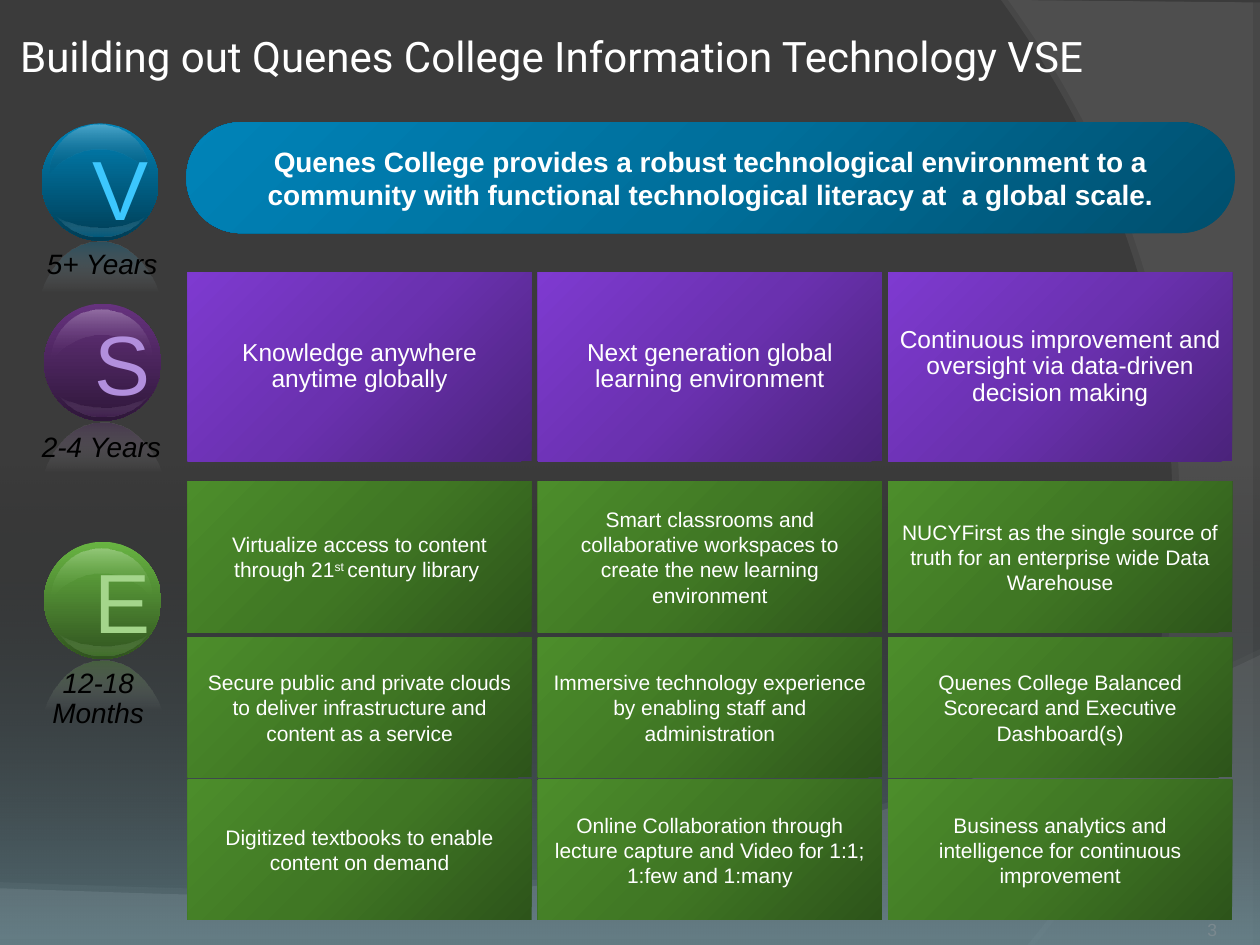
"""Build the VSE roadmap slide on a grid of 100 columns by 75 rows."""
from dataclasses import dataclass

from pptx import Presentation
from pptx.dml.color import RGBColor
from pptx.enum.shapes import MSO_SHAPE
from pptx.enum.text import MSO_ANCHOR, MSO_AUTO_SIZE, PP_ALIGN
from pptx.oxml import parse_xml
from pptx.oxml.ns import nsdecls, qn
from pptx.shapes.autoshape import Shape
from pptx.slide import Slide
from pptx.util import Inches, Pt

CARD, OVAL, MOON, RECT = (MSO_SHAPE.ROUNDED_RECTANGLE, MSO_SHAPE.OVAL,
                          MSO_SHAPE.MOON, MSO_SHAPE.RECTANGLE)
LEFT, CENTER = PP_ALIGN.LEFT, PP_ALIGN.CENTER
MIDDLE, TOP = MSO_ANCHOR.MIDDLE, MSO_ANCHOR.TOP
GROW, FIXED = MSO_AUTO_SIZE.SHAPE_TO_FIT_TEXT, MSO_AUTO_SIZE.NONE
WIDTH, HEIGHT = Inches(10), Inches(7.5)
COLS, ROWS = 100, 75
WHITE, BLACK = "FFFFFF", "000000"
FIRST_COL, COL_STEP, CARD_W = 14.9, 27.8, 27.3
BLUE = ("004E6D", "006F9B", "0083B8")
PURPLE = ("4B237B", "6A31AF", "7E3AD0")
GREEN = ("2D541A", "407724", "4C8D2B")
WAVE = [[(0, 70.5)], [(0, 75)], [(100, 75)], [(100, 52)],
        [(55.9, 72.9), (39.1, 71.9), (0, 70.5)]]
SWEEP = [[(100, 0.2)], [(100, 75)], [(82.1, 75)],
         [(93.5, 61.9), (101.8, 30), (80, 0)], [(100, 0.2)]]
REFLECTION = [[(4.6, 9.4)], [(2.5, 9.4), (0.8, 11), (0, 13.3)], [(9.3, 13.3)],
              [(8.4, 11), (6.7, 9.4), (4.6, 9.4)]]
RIM = [[(8.2, 7.4)], [(7.4, 8), (5.8, 8.3), (4.7, 8.3)], [(3.6, 8.3), (2, 8), (1.2, 7.4)],
       [(1.4, 7.6), (1.6, 7.8), (1.8, 8)], [(2.5, 8.6), (3.6, 9), (4.7, 9)],
       [(5.8, 9), (6.9, 8.6), (7.6, 8)], [(7.8, 7.8), (8, 7.6), (8.2, 7.4)]]

Segment = list[tuple[float, float]]


@dataclass(frozen=True)
class Ball:
    """A glossy lettered ball with its time span below."""
    letter: str
    x: float
    y: float
    light: str
    dark: str
    letter_color: str
    letter_y: float
    gloss_y: float
    gloss_end: str
    rim_opacity: float
    span: str
    span_box: tuple


@dataclass(frozen=True)
class CardRow:
    """A row of three equal cards."""
    y: float
    h: float
    colors: tuple
    size: float
    spacing: float | None
    inset: float
    texts: tuple


BALLS = (
    Ball("V", 3.3, 9.8, "0183B7", "003D55", "3CC7FE", 1.4, -1.9, BLACK, 40,
         "5+ Years", (2.5, 19.4, 11.2, 3.4)),
    Ball("E", 3.5, 43, "68B442", "30531F", "A4D58B", 1, -1.5, "68B442", 30,
         "12-18\nMonths", (3.1, 52.6, 9.4, 5.9)),
    Ball("S", 3.5, 24.1, "66327E", "2F173A", "B28FDD", 1, -1.5, "66327E", 30,
         "2-4 Years", (2.1, 33.9, 11.9, 3.4)),
)
CARD_ROWS = (
    CardRow(21.6, 15, PURPLE, 14, 0.9, 0.08, (
        "Knowledge anywhere anytime globally",
        "Next generation global learning environment",
        "Continuous improvement and oversight via data-driven decision making")),
    CardRow(38.2, 12, GREEN, 12, None, 0.1, (
        "Virtualize access to content through 21^st ^century library ",
        "Smart classrooms and collaborative workspaces to create the new learning environment",
        "NUCYFirst as the single source of truth for an enterprise wide Data Warehouse")),
    CardRow(50.6, 11.1, GREEN, 12, None, 0.1, (
        "Secure public and private clouds to deliver infrastructure and content as a service",
        "Immersive technology experience by enabling staff and administration",
        "Quenes College Balanced Scorecard and Executive Dashboard(s)")),
    CardRow(61.9, 11.1, GREEN, 12, None, 0.1, (
        "Digitized textbooks to enable content on demand",
        "Online Collaboration through lecture capture and Video for 1:1; 1:few and 1:many",
        "Business analytics and intelligence for continuous improvement")),
)


def box(x: float, y: float, w: float, h: float) -> tuple[int, ...]:
    """Turn grid columns and rows into slide lengths."""
    return (round(x * WIDTH / COLS), round(y * HEIGHT / ROWS),
            round(w * WIDTH / COLS), round(h * HEIGHT / ROWS))


def paint(sp: Shape, *stops: tuple[str, float], angle: float = 0) -> Shape:
    """Fill with (hex, opacity) stops, one being solid, and drop line and shadow."""
    sp.shadow.inherit = False
    sp.line.fill.background()
    sp.fill.background()
    clrs = [f'<a:srgbClr val="{c}"><a:alpha val="{round(a * 1000)}"/></a:srgbClr>'
            for c, a in stops]
    if len(clrs) == 1:
        xml = f'<a:solidFill {nsdecls("a")}>{clrs[0]}</a:solidFill>'
    else:
        gs = "".join(f'<a:gs pos="{i * 100000 // (len(clrs) - 1)}">{c}</a:gs>'
                     for i, c in enumerate(clrs))
        xml = (f'<a:gradFill {nsdecls("a")} rotWithShape="1"><a:gsLst>{gs}</a:gsLst>'
               f'<a:lin ang="{round(angle * 60000)}" scaled="0"/></a:gradFill>')
    spPr = sp._element.spPr
    spPr.replace(spPr.find(qn("a:noFill")), parse_xml(xml))
    return sp


def cast_shadow(sp: Shape, opacity: int, distance: float, direction: int) -> None:
    """Give a shape a hard grey shadow."""
    sp._element.spPr.find(qn("a:effectLst")).append(parse_xml(
        f'<a:outerShdw {nsdecls("a")} blurRad="0" dist="{Pt(distance)}" '
        f'dir="{direction * 60000}" algn="ctr" rotWithShape="0"><a:srgbClr val="808080">'
        f'<a:alpha val="{opacity * 1000}"/></a:srgbClr></a:outerShdw>'))


def outline(s: Slide, segments: list[Segment], x: float = 0, y: float = 0) -> Shape:
    """Draw a closed outline of lines (one point) and Bezier curves (three points)."""
    segs = [[box(x + px, y + py, 0, 0)[:2] for px, py in seg] for seg in segments]
    builder = s.shapes.build_freeform(*segs[0][0])
    builder.add_line_segments([seg[-1] for seg in segs[1:]], close=True)
    sp = builder.convert_to_shape()
    lines = list(sp._element.spPr.iter(qn("a:lnTo")))
    for line, seg in zip(lines, segs[1:]):
        if len(seg) == 3:
            pts = "".join(f'<a:pt x="{px - sp.left}" y="{py - sp.top}"/>' for px, py in seg)
            line.getparent().replace(line, parse_xml(
                f'<a:cubicBezTo {nsdecls("a")}>{pts}</a:cubicBezTo>'))
    return sp


def write(sp: Shape, text: str, *, size: float, color: str = WHITE, font: str = "Arial",
          bold: bool = False, italic: bool = False, align: PP_ALIGN = CENTER,
          anchor: MSO_ANCHOR = MIDDLE, spacing: float | None = None, wrap: bool = True,
          fit: MSO_AUTO_SIZE = FIXED, insets: tuple[float, float] = (0.1, 0.05)) -> None:
    """Write text with carets around superscripts and newlines as line breaks."""
    tf = sp.text_frame
    tf.word_wrap, tf.auto_size, tf.vertical_anchor = wrap, fit, anchor
    tf.margin_left = tf.margin_right = Inches(insets[0])
    tf.margin_top = tf.margin_bottom = Inches(insets[1])
    p = tf.paragraphs[0]
    p.alignment, p.line_spacing = align, spacing
    for n, line in enumerate(text.split("\n")):
        if n:
            p.add_line_break()
        for i, part in enumerate(line.split("^")):
            r = p.add_run()
            r.text = part
            r.font.name, r.font.size = font, Pt(size)
            r.font.bold, r.font.italic = bold, italic
            r.font.color.rgb = RGBColor.from_string(color)
            if i % 2:
                r._r.get_or_add_rPr().set("baseline", "30000")


def draw_backdrop(s: Slide) -> None:
    """Draw the dark ground with its sweeping curves."""
    s.background.fill.solid()
    s.background.fill.fore_color.rgb = RGBColor.from_string("3B3B3B")
    cast_shadow(paint(outline(s, WAVE), ("7C7C7C", 45)), 35, 3.5, 270)
    cast_shadow(paint(outline(s, SWEEP), ("595959", 40)), 45, 4, 180)
    glow = s.shapes.add_shape(RECT, *box(0, 36.8, 100, 38.2))
    paint(glow, (BLACK, 0), ("6EA0B0", 50), angle=90)


def draw_ball(s: Slide, b: Ball) -> None:
    """Draw a ball with reflection, gloss, letter and time span."""
    paint(outline(s, REFLECTION, b.x, b.y), (b.light, 30), (WHITE, 0), angle=90)
    paint(s.shapes.add_shape(OVAL, *box(b.x, b.y, 9.3, 9.3)),
          (b.light, 100), (b.dark, 100), angle=90)
    paint(outline(s, RIM, b.x, b.y), (WHITE, 0), (b.light, b.rim_opacity), angle=90)
    gloss = s.shapes.add_shape(MOON, *box(b.x + 2.6, b.y + b.gloss_y, 3.9, 7.9))
    gloss.rotation = 90
    paint(gloss, (WHITE, 30), (b.gloss_end, 0))
    write(s.shapes.add_textbox(*box(b.x + 3.1, b.y + b.letter_y, 3.1, 8.2)), b.letter,
          size=48, color=b.letter_color, spacing=0.9, fit=GROW, insets=(0.09, 0.04))
    write(s.shapes.add_textbox(*box(*b.span_box)), b.span, size=16, color=BLACK,
          italic=True, anchor=TOP, spacing=0.9, wrap=False, fit=GROW)


def draw_card(s: Slide, at: tuple[int, ...], colors: tuple, text: str, *,
              corner: float = 0, inset: float = 0.08, **style) -> None:
    """Draw a diagonal gradient card with centred text."""
    sp = s.shapes.add_shape(CARD, *at)
    sp.adjustments[0] = corner
    paint(sp, *((c, 100) for c in colors), angle=225)
    write(sp, text, insets=(inset, 0.1), **style)


def main() -> None:
    """Build and save the slide."""
    prs = Presentation()
    prs.slide_width, prs.slide_height = WIDTH, HEIGHT
    s = prs.slides.add_slide(prs.slide_layouts[5])
    draw_backdrop(s)
    title = s.shapes.title
    title.left, title.top, title.width, title.height = box(1.1, 1.5, 98.1, 5.8)
    write(title, "Building out Quenes College Information Technology VSE", size=24,
          font="Roboto", align=LEFT, insets=(0.05, 0.05))
    s.shapes._spTree.append(title._element)
    for b in BALLS:
        draw_ball(s, b)
    draw_card(s, box(14.8, 9.7, 83.2, 8.8), BLUE,
              "Quenes College provides a robust technological environment to a community "
              "with functional technological literacy at  a global scale.",
              corner=0.49, size=16, bold=True)
    for row in CARD_ROWS:
        for i, text in enumerate(row.texts):
            draw_card(s, box(FIRST_COL + i * COL_STEP, row.y, CARD_W, row.h), row.colors,
                      text, size=row.size, spacing=row.spacing, inset=row.inset)
    write(s.shapes.add_textbox(*box(94.2, 72.5, 4, 2.5)), "3", size=10, color="7B898F",
          insets=(0, 0))
    prs.save("out.pptx")


if __name__ == "__main__":
    main()
